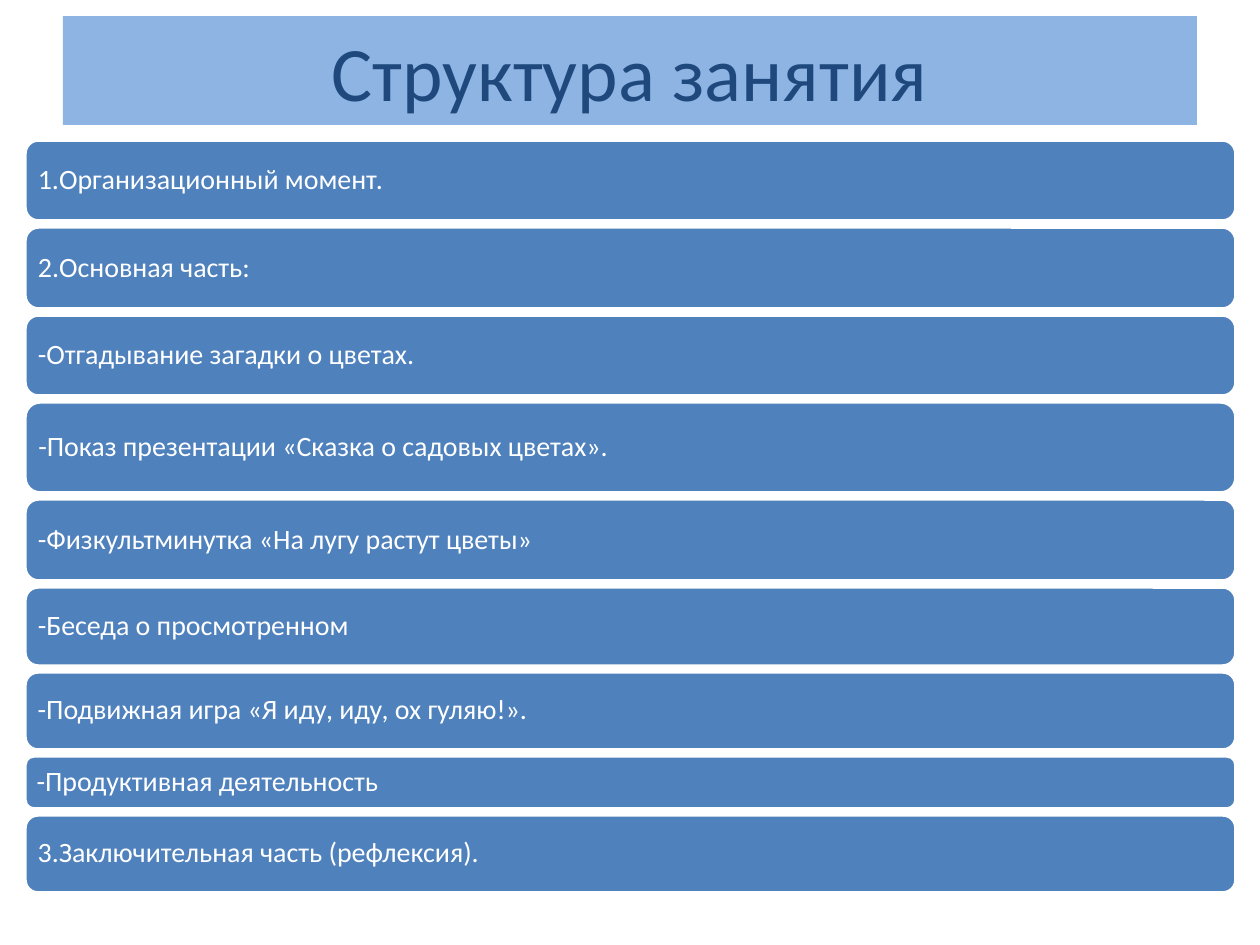
"""Build the lesson structure slide: a title band above a stack of rounded steps."""
from pptx import Presentation
from pptx.dml.color import RGBColor
from pptx.enum.shapes import MSO_SHAPE
from pptx.enum.text import MSO_ANCHOR, PP_ALIGN
from pptx.util import Emu, Pt

EMU_PER_PX = 914400 / 126
STEP_LEFT, STEP_TOP, STEP_WIDTH, STEP_GAP = 25, 140, 1211, 6
STEPS = [
    ("1.Организационный момент.", 81),
    ("2.Основная часть:", 82),
    ("-Отгадывание загадки о цветах.", 81),
    ("-Показ презентации «Сказка о садовых цветах».", 91),
    ("-Физкультминутка «На лугу растут цветы»", 82),
    ("-Беседа о просмотренном", 79),
    ("-Подвижная игра «Я иду, иду, ох гуляю!».", 78),
    ("-Продуктивная деятельность", 53),
    ("3.Заключительная часть (рефлексия).", 78),
]


def px(value):
    """Turn pixels into EMU."""
    return Emu(round(value * EMU_PER_PX))


def color(value):
    """Turn a hex string into a colour."""
    return RGBColor.from_string(value)


def add_box(slide, kind, left, top, width, height, fill, line=None):
    """Add a filled preset shape, outlined when a line colour is given."""
    shape = slide.shapes.add_shape(kind, px(left), px(top), px(width), px(height))
    shape.shadow.inherit = False
    shape.fill.solid()
    shape.fill.fore_color.rgb = color(fill)
    if line:
        shape.line.color.rgb = color(line)
        shape.line.width = Pt(2)
    else:
        shape.line.fill.background()
    return shape


def set_text(shape, text, size, font_color, align=PP_ALIGN.LEFT, spacing=1.0, inset=9):
    """Write one vertically centred paragraph into a shape."""
    frame = shape.text_frame
    frame.word_wrap = True
    frame.vertical_anchor = MSO_ANCHOR.MIDDLE
    frame.margin_left = frame.margin_right = px(inset)
    frame.margin_top = frame.margin_bottom = px(inset)
    paragraph = frame.paragraphs[0]
    paragraph.alignment = align
    paragraph.line_spacing = spacing
    run = paragraph.add_run()
    run.text = text
    run.font.name = "Calibri"
    run.font.size = Pt(size)
    run.font.color.rgb = color(font_color)


def add_title(slide):
    """Add the title band."""
    band = add_box(slide, MSO_SHAPE.RECTANGLE, 63, 16, 1134, 109, "8EB4E3")
    set_text(band, "Структура занятия", 44, "1F497D", align=PP_ALIGN.CENTER)


def add_steps(slide):
    """Stack the lesson steps with equal gaps."""
    top = STEP_TOP
    for text, height in STEPS:
        step = add_box(slide, MSO_SHAPE.ROUNDED_RECTANGLE, STEP_LEFT, top,
                       STEP_WIDTH, height, "4F81BD", line="FFFFFF")
        set_text(step, text, 16, "FFFFFF", spacing=0.9)
        top += height + STEP_GAP


def main():
    """Create and save the presentation."""
    presentation = Presentation()
    presentation.slide_width = px(1260)
    presentation.slide_height = px(945)
    slide = presentation.slides.add_slide(presentation.slide_layouts[6])
    add_title(slide)
    add_steps(slide)
    presentation.save("out.pptx")


if __name__ == "__main__":
    main()
